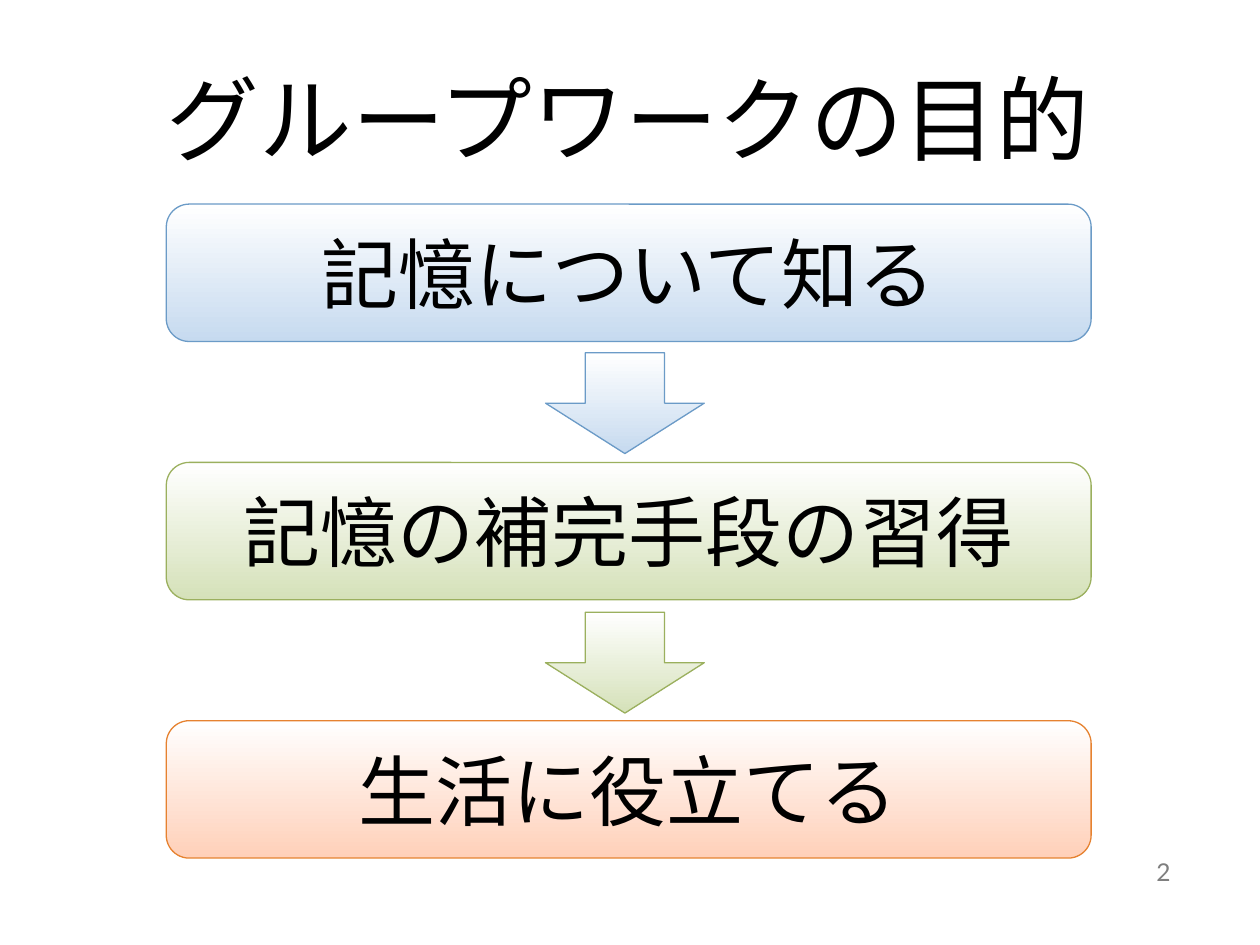
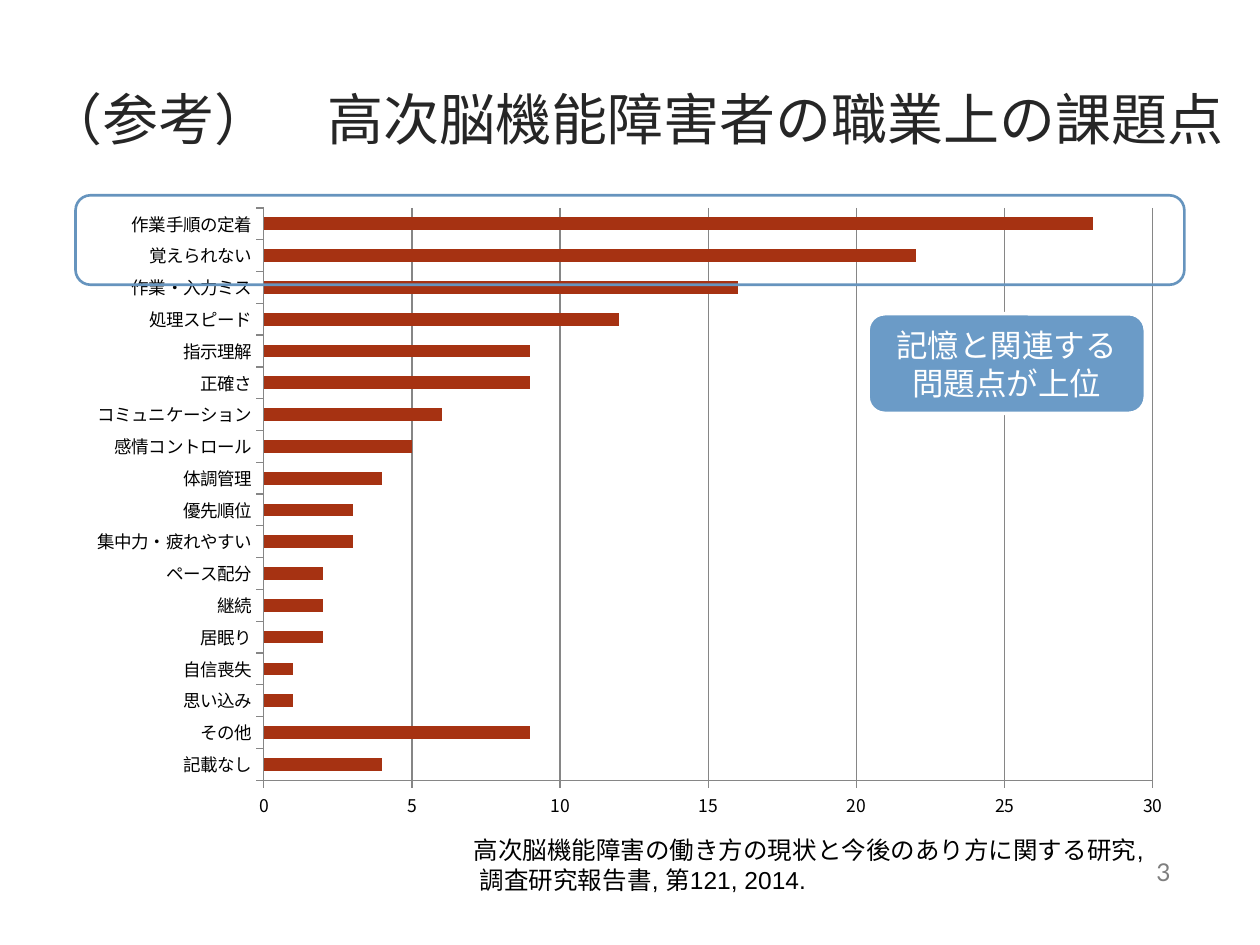
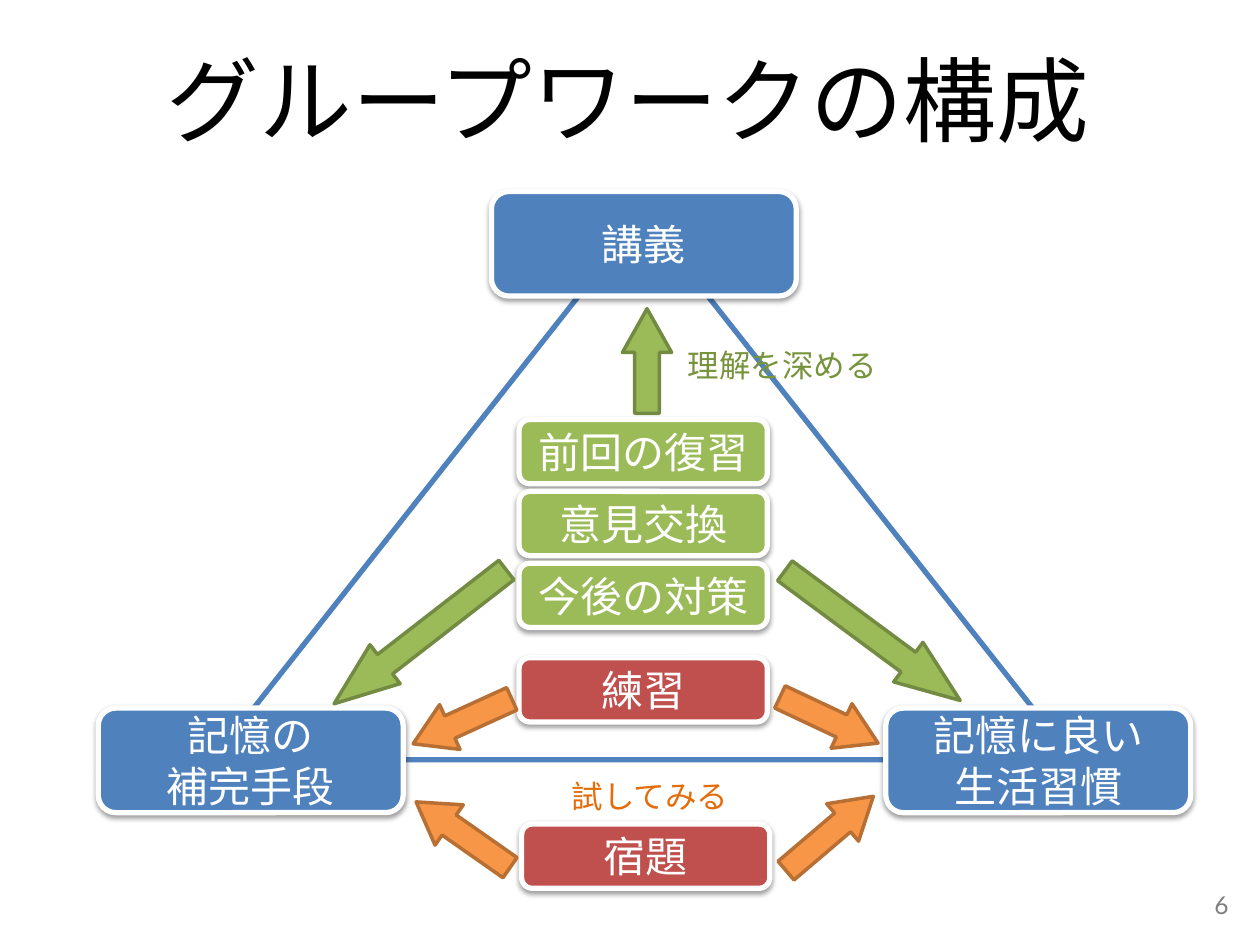
from dataclasses import dataclass

import lxml.etree
import pptx
import pptx.chart.data
import pptx.dml.color
import pptx.enum.chart
import pptx.enum.shapes
import pptx.enum.text
import pptx.oxml.ns
import pptx.util

PX = 9144  # 100 px to the inch
SHAPES = pptx.enum.shapes.MSO_SHAPE
ALIGN = pptx.enum.text.PP_ALIGN
MIDDLE = pptx.enum.text.MSO_ANCHOR.MIDDLE
CJK = "Noto Sans CJK JP"
COLORS = {
    "black": "000000", "white": "FFFFFF", "title": "262626", "number": "7F7F7F",
    "blue edge": "6B9BC7", "blue tint": "C6DAEF",
    "green edge": "9BB05E", "green tint": "D5E1B9",
    "orange edge": "E68230", "orange tint": "FFD0B9",
    "bar": "A63212", "grid": "868686", "frame": "6694BE",
    "blue": "4F81BD", "green": "9BBB59", "red": "C0504D", "orange": "F79646",
    "green line": "738A42", "orange line": "B76F34",
    "green text": "77933C", "orange text": "E46C0A",
}


@dataclass
class Area:
    left: int
    top: int
    width: int
    height: int

    def emu(self) -> list[int]:
        return [n * PX for n in (self.left, self.top, self.width, self.height)]


@dataclass
class Style:
    size: int
    font: str
    color: str
    align: ALIGN = ALIGN.CENTER


@dataclass
class Stage:
    text: str
    top: int
    hue: str
    arrow_top: int = 0


@dataclass
class Card:
    text: str
    area: Area
    color: str


@dataclass
class Arrow:
    area: Area
    angle: float
    head: float
    color: str


def rgb(name: str) -> pptx.dml.color.RGBColor:
    return pptx.dml.color.RGBColor.from_string(COLORS[name])


def set_font(font, style: Style) -> None:
    font.size = pptx.util.Pt(style.size)
    font.name = style.font
    font.color.rgb = rgb(style.color)


def write(frame, text: str, style: Style) -> None:
    frame.word_wrap = True
    frame.text = text
    for paragraph in frame.paragraphs:
        paragraph.alignment = style.align
        for run in paragraph.runs:
            set_font(run.font, style)
            # East Asian characters take the same typeface
            east_asian = lxml.etree.SubElement(
                run._r.get_or_add_rPr(), pptx.oxml.ns.qn("a:ea"))
            east_asian.set("typeface", style.font)


def add_label(slide, area: Area, text: str, style: Style):
    frame = slide.shapes.add_textbox(*area.emu()).text_frame
    write(frame, text, style)
    return frame


def add_figure(slide, kind: SHAPES, area: Area, line: str, weight: float, fill: str = ""):
    figure = slide.shapes.add_shape(kind, *area.emu())
    figure.shadow.inherit = False
    figure.line.color.rgb = rgb(line)
    figure.line.width = pptx.util.Pt(weight)
    if fill:
        figure.fill.solid()
        figure.fill.fore_color.rgb = rgb(fill)
    else:
        figure.fill.background()
    return figure


def add_tinted(slide, kind: SHAPES, area: Area, hue: str):
    figure = add_figure(slide, kind, area, f"{hue} edge", 0.75)
    figure.fill.gradient()
    figure.fill.gradient_angle = 270
    for stop, color in zip(figure.fill.gradient_stops, ("white", f"{hue} tint")):
        stop.color.rgb = rgb(color)
    return figure


def add_card(slide, card: Card) -> None:
    figure = add_figure(slide, SHAPES.ROUNDED_RECTANGLE, card.area, "white", 3, card.color)
    figure.text_frame.vertical_anchor = MIDDLE
    write(figure.text_frame, card.text, Style(24, "Calibri", "white"))
    qn = pptx.oxml.ns.qn
    effects = figure.element.spPr.find(qn("a:effectLst"))
    shadow = lxml.etree.SubElement(effects, qn("a:outerShdw"), blurRad="39370",
                                   dist="20320", dir="5400000", rotWithShape="0")
    tone = lxml.etree.SubElement(shadow, qn("a:srgbClr"), val=COLORS["black"])
    lxml.etree.SubElement(tone, qn("a:alpha"), val="38000")


def add_arrow(slide, arrow: Arrow) -> None:
    figure = add_figure(slide, SHAPES.RIGHT_ARROW, arrow.area,
                        f"{arrow.color} line", 2, arrow.color)
    figure.adjustments[0] = 0.5
    figure.adjustments[1] = arrow.head
    figure.rotation = arrow.angle


def start_slide(deck, title: str, area: Area, style: Style, number: int,
                number_area: Area, spacing: float = 1.0):
    slide = deck.slides.add_slide(deck.slide_layouts[5])
    heading = slide.shapes.title
    heading.left, heading.top, heading.width, heading.height = area.emu()
    frame = heading.text_frame
    frame.auto_size = pptx.enum.text.MSO_AUTO_SIZE.NONE
    frame.vertical_anchor = MIDDLE
    write(frame, title, style)
    frame.paragraphs[0].line_spacing = spacing
    page = add_label(slide, number_area, str(number),
                     Style(14, "Lato", "number", ALIGN.RIGHT))
    page.vertical_anchor = MIDDLE
    return slide


BIG_TITLE = Style(53, CJK, "black")
NUMBER_AREA = Area(706, 672, 233, 40)


def build_purpose(deck) -> None:
    slide = start_slide(deck, "グループワークの目的", Area(59, 44, 879, 126), BIG_TITLE,
                        2, NUMBER_AREA, 0.6)
    stages = [
        Stage("記憶について知る", 162, "blue", 280),
        Stage("記憶の補完手段の習得", 367, "green", 486),
        Stage("生活に役立てる", 572, "orange"),
    ]
    for stage in stages:
        box = add_tinted(slide, SHAPES.ROUNDED_RECTANGLE,
                         Area(132, stage.top, 734, 109), stage.hue)
        box.text_frame.vertical_anchor = MIDDLE
        write(box.text_frame, stage.text, Style(44, CJK, "black"))
        if stage.arrow_top:
            add_tinted(slide, SHAPES.DOWN_ARROW, Area(433, stage.arrow_top, 126, 80), stage.hue)


PROBLEMS = {
    "作業手順の定着": 28, "覚えられない": 22, "作業・入力ミス": 16, "処理スピード": 12,
    "指示理解": 9, "正確さ": 9, "コミュニケーション": 6, "感情コントロール": 5,
    "体調管理": 4, "優先順位": 3, "集中力・疲れやすい": 3, "ペース配分": 2,
    "継続": 2, "居眠り": 2, "自信喪失": 1, "思い込み": 1, "その他": 9, "記載なし": 4,
}


def add_problem_chart(slide) -> None:
    data = pptx.chart.data.CategoryChartData()
    data.categories = list(PROBLEMS)
    data.add_series("Series 1", list(PROBLEMS.values()))
    chart = slide.shapes.add_chart(pptx.enum.chart.XL_CHART_TYPE.BAR_CLUSTERED,
                                   *Area(60, 155, 880, 504).emu(), data).chart
    chart.has_legend = False
    chart.has_title = False
    set_font(chart.font, Style(10, "Cambria", "black"))

    # Bars
    plot = chart.plots[0]
    plot.gap_width = 150
    plot.vary_by_categories = False
    bars = plot.series[0].format.fill
    bars.solid()
    bars.fore_color.rgb = rgb("bar")

    # Axes: first problem on top, values along the bottom
    problems, counts = chart.category_axis, chart.value_axis
    problems.reverse_order = True
    counts._element.find(pptx.oxml.ns.qn("c:crosses")).set("val", "max")
    counts.minimum_scale, counts.maximum_scale, counts.major_unit = 0, 30, 5
    counts.has_major_gridlines = True
    set_font(counts.tick_labels.font, Style(10, CJK, "black"))
    for axis in (problems, counts):
        axis.major_tick_mark = pptx.enum.chart.XL_TICK_MARK.OUTSIDE
    for ruled in (problems, counts, counts.major_gridlines):
        ruled.format.line.color.rgb = rgb("grid")
        ruled.format.line.width = pptx.util.Pt(0.75)


def build_problems(deck) -> None:
    slide = start_slide(deck, "（参考）　高次脳機能障害者の職業上の課題点",
                        Area(20, 15, 969, 158), Style(32, CJK, "title"), 3, NUMBER_AREA)
    add_problem_chart(slide)
    citation = add_label(
        slide, Area(366, 658, 606, 57),
        "高次脳機能障害の働き方の現状と今後のあり方に関する研究,\n調査研究報告書, 第121, 2014.",
        Style(14, "Arial", "black", ALIGN.LEFT))
    citation.paragraphs[1]._p.get_or_add_pPr().set("marL", str(5 * PX))

    # Highlight of the memory problems
    add_figure(slide, SHAPES.ROUNDED_RECTANGLE, Area(60, 155, 880, 71), "frame", 1.5)
    callout = add_figure(slide, SHAPES.ROUNDED_RECTANGLE, Area(689, 249, 220, 79),
                         "white", 2, "blue edge")
    callout.text_frame.vertical_anchor = MIDDLE
    write(callout.text_frame, "記憶と関連する問題点が上位", Style(18, "Arial", "white"))


def build_structure(deck) -> None:
    slide = start_slide(deck, "グループワークの構成", Area(59, 29, 879, 126), BIG_TITLE,
                        6, Area(752, 698, 233, 40), 0.6)
    add_figure(slide, SHAPES.ISOSCELES_TRIANGLE, Area(169, 170, 683, 433), "blue", 3)

    # Corners of the triangle, then the activities inside it
    corners = [("講義", 390, 152), ("記憶の\n補完手段", 78, 562), ("記憶に良い\n生活習慣", 703, 562)]
    cards = [Card(text, Area(left, top, 242, 83), "blue") for text, left, top in corners]
    cards += [Card(text, Area(412, 333 + 57 * row, 197, 51), "green")
              for row, text in enumerate(("前回の復習", "意見交換", "今後の対策"))]
    cards += [Card("練習", Area(412, 522, 197, 51), "red"),
              Card("宿題", Area(414, 654, 197, 51), "red")]
    for card in cards:
        add_card(slide, card)

    arrows = [
        Arrow(Area(472, 267, 83, 39), 270, 0.89, "green"),
        Arrow(Area(247, 486, 173, 39), 142.2, 1.31, "green"),
        Arrow(Area(606, 485, 173, 39), 36.5, 1.31, "green"),
        Arrow(Area(324, 553, 86, 39), 155.5, 0.82, "orange"),
        Arrow(Area(615, 552, 86, 39), 25.2, 0.82, "orange"),
        Arrow(Area(322, 643, 91, 39), 215, 0.82, "orange"),
        Arrow(Area(613, 642, 91, 39), 319.6, 0.82, "orange"),
    ]
    for arrow in arrows:
        add_arrow(slide, arrow)

    add_label(slide, Area(536, 270, 175, 40), "理解を深める",
              Style(18, "Calibri", "green text", ALIGN.LEFT))
    add_label(slide, Area(444, 612, 150, 40), "試してみる",
              Style(18, "Calibri", "orange text", ALIGN.LEFT))


def main() -> None:
    deck = pptx.Presentation()
    deck.slide_width, deck.slide_height = 1000 * PX, 750 * PX
    build_purpose(deck)
    build_problems(deck)
    build_structure(deck)
    deck.save("out.pptx")


if __name__ == "__main__":
    main()
